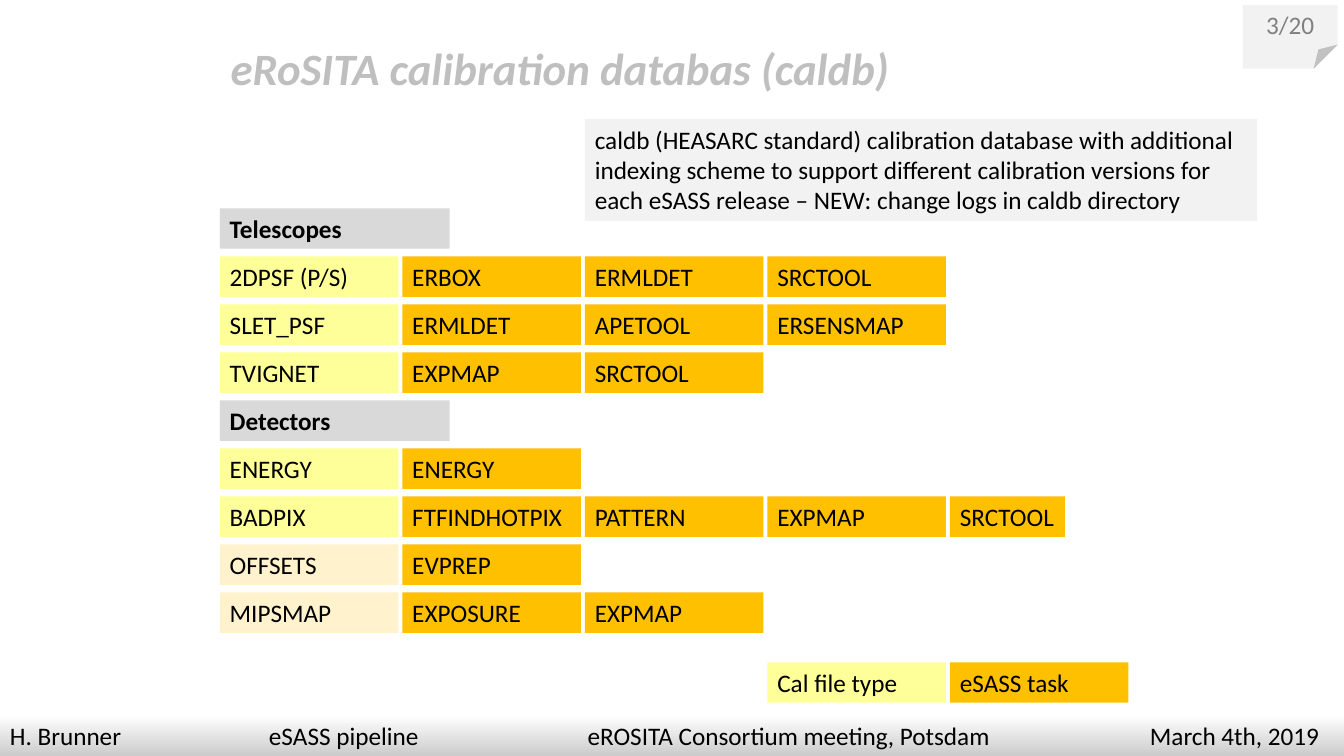
from dataclasses import dataclass

from lxml import etree
from pptx import Presentation, util as u
from pptx.dml.color import RGBColor
from pptx.enum import shapes, text
from pptx.oxml import ns


@dataclass(frozen=True)
class Theme:
    font: str = "Calibri"
    body: int = 18
    title: int = 32
    ink: str = "000000"
    title_ink: str = "BFBFBF"
    page_ink: str = "808080"
    panel: str = "F2F2F2"
    heading: str = "D9D9D9"
    file_type: str = "FFFF99"
    file_type_pale: str = "FFF2CC"
    task: str = "FFC000"
    footer_top: str = "FFFFFF"
    footer_bottom: str = "CCCCCC"


THEME = Theme()
SHAPE, ALIGN, ANCHOR, FIT = (shapes.MSO_SHAPE, text.PP_ALIGN,
                             text.MSO_ANCHOR, text.MSO_AUTO_SIZE)

# Calibration grid, in cm
COLUMN_PITCH, ROW_PITCH = 4.6, 1.21
CELL_W, CELL_H, HEADING_W = 4.5, 1.02, 5.79
LAST_TASK_W = 2.9

# Each row: file type, its fill, tasks; a heading has no tasks
CALIBRATION_ROWS = [
    ("Telescopes", THEME.heading, []),
    ("2DPSF (P/S)", THEME.file_type, ["ERBOX", "ERMLDET", "SRCTOOL"]),
    ("SLET_PSF", THEME.file_type, ["ERMLDET", "APETOOL", "ERSENSMAP"]),
    ("TVIGNET", THEME.file_type, ["EXPMAP", "SRCTOOL"]),
    ("Detectors", THEME.heading, []),
    ("ENERGY", THEME.file_type, ["ENERGY"]),
    ("BADPIX", THEME.file_type,
     ["FTFINDHOTPIX", "PATTERN", "EXPMAP", "SRCTOOL"]),
    ("OFFSETS", THEME.file_type_pale, ["EVPREP"]),
    ("MIPSMAP", THEME.file_type_pale, ["EXPOSURE", "EXPMAP"]),
]

FOOTER_PARTS = ["H. Brunner", "eSASS pipeline",
                "eROSITA Consortium meeting, Potsdam", "March 4th, 2019"]
FOOTER_TABS = [6.53, 14.56, 28.73]


def write(frame, words, size=THEME.body, color=THEME.ink, bold=False,
          italic=False, align=ALIGN.LEFT, anchor=ANCHOR.TOP, wrap=True,
          fit=FIT.SHAPE_TO_FIT_TEXT):
    frame.word_wrap = wrap
    frame.auto_size = fit
    frame.vertical_anchor = anchor
    paragraph = frame.paragraphs[0]
    paragraph.alignment = align
    run = paragraph.add_run()
    run.text = words
    font = run.font
    font.name, font.size = THEME.font, u.Pt(size)
    font.bold, font.italic = bold, italic
    font.color.rgb = RGBColor.from_string(color)


def add_panel(slide, box, fill, words, outline=SHAPE.RECTANGLE, **style):
    panel = slide.shapes.add_shape(outline, *map(u.Cm, box))
    panel.shadow.inherit = False
    panel.line.fill.background()
    panel.fill.solid()
    panel.fill.fore_color.rgb = RGBColor.from_string(fill)
    write(panel.text_frame, words, **style)
    return panel


def add_title(slide, box):
    title = slide.shapes.add_textbox(*map(u.Cm, box))
    write(title.text_frame, "eRoSITA calibration databas (caldb)",
          size=THEME.title, color=THEME.title_ink, bold=True, italic=True)


def add_page_number(slide, box):
    corner = add_panel(slide, box, THEME.panel, "3/20", SHAPE.FOLDED_CORNER,
                       color=THEME.page_ink, align=ALIGN.CENTER,
                       anchor=ANCHOR.MIDDLE, fit=FIT.NONE)
    # Size of the fold
    geometry = corner.element.spPr.find(ns.qn("a:prstGeom"))
    fold = geometry.find(ns.qn("a:avLst"))
    if fold is None:
        fold = etree.SubElement(geometry, ns.qn("a:avLst"))
    for guide in list(fold):
        fold.remove(guide)
    etree.SubElement(fold, ns.qn("a:gd"), name="adj", fmla="val 37700")


def add_calibration_grid(slide, left, top):
    for row, (file_type, fill, tasks) in enumerate(CALIBRATION_ROWS):
        y = top + row * ROW_PITCH
        width = CELL_W if tasks else HEADING_W
        add_panel(slide, (left, y, width, CELL_H), fill, file_type,
                  bold=not tasks)
        for column, task in enumerate(tasks, 1):
            narrow = column == 4
            add_panel(slide, (left + column * COLUMN_PITCH, y,
                              LAST_TASK_W if narrow else CELL_W, CELL_H),
                      THEME.task, task, wrap=not narrow)


def add_legend(slide, left, top):
    entries = [("Cal file type", THEME.file_type), ("eSASS task", THEME.task)]
    for column, (label, fill) in enumerate(entries):
        add_panel(slide, (left + column * COLUMN_PITCH, top, CELL_W, CELL_H),
                  fill, label)


def add_footer(slide, box):
    footer = add_panel(slide, box, THEME.footer_bottom, "\t".join(FOOTER_PARTS))
    footer.fill.gradient()
    footer.fill.gradient_angle = 270
    for stop, color in zip(footer.fill.gradient_stops,
                           (THEME.footer_top, THEME.footer_bottom)):
        stop.color.rgb = RGBColor.from_string(color)
    # Tab stops for the footer parts
    properties = footer.text_frame.paragraphs[0]._p.get_or_add_pPr()
    tabs = etree.SubElement(properties, ns.qn("a:tabLst"))
    for position in FOOTER_TABS:
        etree.SubElement(tabs, ns.qn("a:tab"), pos=str(u.Cm(position)), algn="l")


def build_caldb_slide(deck):
    slide = deck.slides.add_slide(deck.slide_layouts[6])
    grid_left = 5.54
    add_calibration_grid(slide, grid_left, 5.25)
    add_legend(slide, grid_left + 3 * COLUMN_PITCH, 16.69)
    add_panel(slide, (grid_left + 2 * COLUMN_PITCH, 3, 16.94, 2.57), THEME.panel,
              "caldb (HEASARC standard) calibration database with additional "
              "indexing scheme to support different calibration versions for "
              "each eSASS release – NEW: change logs in caldb directory")
    add_title(slide, (5.56, 0.91, 19.79, 1.63))
    add_page_number(slide, (31.32, 0.13, 2.39, 1.6))
    add_footer(slide, (0, 18.02, 33.87, CELL_H))


def main():
    deck = Presentation()
    deck.slide_width, deck.slide_height = u.Cm(33.87), u.Cm(19.05)
    build_caldb_slide(deck)
    deck.save("out.pptx")


if __name__ == "__main__":
    main()
